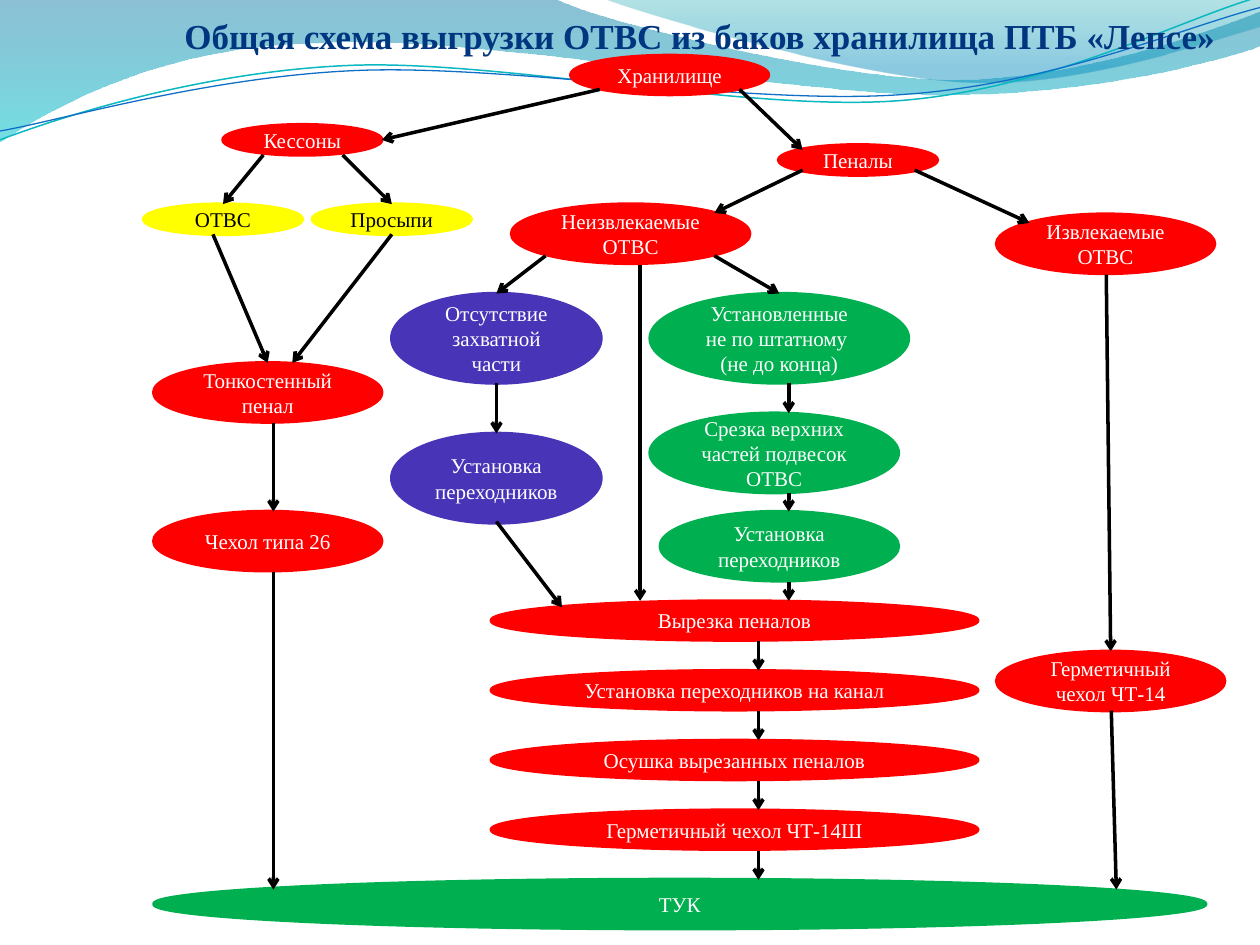
"""Build the slide with the unloading scheme as a flow of ellipses and arrows."""
from lxml.etree import SubElement
from pptx import Presentation
from pptx.dml.color import RGBColor
from pptx.enum.shapes import MSO_CONNECTOR, MSO_SHAPE
from pptx.enum.text import MSO_ANCHOR, PP_ALIGN
from pptx.oxml.ns import qn
from pptx.util import Inches, Pt

HUES = {
    "red": "FF0000", "green": "00B050", "violet": "4834B7", "yellow": "FFFF00",
    "white": "FFFFFF", "black": "000000", "navy": "00357F",
    "ocean": "0074A1", "aqua": "00C6CF", "teal": "00A1A9", "sky": "008BBF",
    "cyan": "0AB8BF", "blue": "0F6FC6",
}
RGB = {name: RGBColor.from_string(code) for name, code in HUES.items()}


def write(frame, text, size=12, hue="white", bold=False):
    """Fill a text frame with centred paragraphs, one for each line."""
    frame.word_wrap = True
    frame.vertical_anchor = MSO_ANCHOR.MIDDLE
    for i, line in enumerate(text.split("\n")):
        para = frame.paragraphs[0] if i == 0 else frame.add_paragraph()
        para.alignment = PP_ALIGN.CENTER
        run = para.add_run()
        run.text = line
        run.font.name = "Times New Roman"
        run.font.size = Pt(size)
        run.font.bold = bold
        run.font.color.rgb = RGB[hue]


def trace(shapes, path, closed):
    """Draw an outline of corners (2 numbers) and Bezier curves (6 numbers)."""
    dots = [(Inches(step[-2]), Inches(step[-1])) for step in path]
    pen = shapes.build_freeform(*dots[0])
    pen.add_line_segments(dots[1:], close=closed)
    shape = pen.convert_to_shape()
    shape.shadow.inherit = False
    legs = shape._element.spPr.findall(".//" + qn("a:lnTo"))
    for leg, step in zip(legs, path[1:]):
        if len(step) == 6:
            bend = SubElement(leg.getparent(), qn("a:cubicBezTo"))
            for x, y in zip(step[::2], step[1::2]):
                SubElement(bend, qn("a:pt"), x=str(Inches(x) - shape.left),
                           y=str(Inches(y) - shape.top))
            leg.getparent().replace(leg, bend)
    return shape


deck = Presentation()
deck.slide_width, deck.slide_height = Inches(10), Inches(7.5)
slide = deck.slides.add_slide(deck.slide_layouts[5])
shapes = slide.shapes

waves = [
    ([(0, 0), (4.4, -0.01), (4.76, 0.17, 6.64, 0.63, 7.58, 0.63),
      (8.53, 0.63, 9.58, 0.26, 10, 0.09), (10.01, 0.36),
      (9.83, 0.44, 8.7, 0.76, 7.46, 0.75), (6.22, 0.75, 3.82, 0.28, 2.57, 0.34),
      (1.29, 0.36, 0.46, 0.83, -0.01, 1.13)],
     [(0, "ocean", 45), (1, "aqua", 55)]),
    ([(4.79, -0.01), (5.09, 0.11, 6.82, 0.62, 7.69, 0.65),
      (8.56, 0.69, 9.61, 0.32, 10, 0.21), (10, 0)],
     [(0, "teal", 30), (0.8, "sky", 45)]),
]
for path, stops in waves:
    wave = trace(shapes, path, True)
    wave.line.fill.background()
    wave.fill.gradient()
    wave.fill.gradient_angle = 270
    marks = wave._element.spPr.findall(".//" + qn("a:gs"))
    for stop, mark, (spot, hue, alpha) in zip(wave.fill.gradient_stops, marks, stops):
        stop.position = spot
        stop.color.rgb = RGB[hue]
        SubElement(mark[0], qn("a:alpha"), val=str(alpha * 1000))

curves = [
    ([(0, 1.11), (0.48, 0.93, 1.58, 0.57, 2.77, 0.52), (3.95, 0.47, 5.93, 0.89, 7.13, 0.8),
      (8.33, 0.71, 9.38, 0.15, 9.98, -0.02)], "cyan", 0.85),
    ([(0, 1.04), (0.47, 0.96, 1.64, 0.61, 2.83, 0.56), (4.03, 0.51, 5.97, 0.84, 7.17, 0.75),
      (8.36, 0.67, 9.41, 0.21, 10, 0.06)], "blue", 0.75),
]
for path, hue, width in curves:
    curve = trace(shapes, path, False)
    curve.fill.background()
    curve.line.color.rgb = RGB[hue]
    curve.line.width = Pt(width)

title = shapes.title
title.left, title.top, title.width, title.height = map(Inches, (1.22, 0.05, 8.67, 0.47))
write(title.text_frame, "Общая схема выгрузки ОТВС из баков хранилища ПТБ «Лепсе»",
      size=20, hue="navy", bold=True)
title.element.getparent().append(title.element)

nodes = [
    ("store", "Хранилище", "red", 4.53, 0.44, 1.57, 0.31),
    ("cases", "Пеналы", "red", 6.18, 1.15, 1.26, 0.24),
    ("stuck", "Неизвлекаемые ОТВС", "red", 4.06, 1.62, 1.89, 0.47),
    ("free", "Извлекаемые ОТВС", "red", 7.91, 1.7, 1.73, 0.47),
    ("sealed", "Герметичный чехол ЧТ-14", "red", 7.91, 5.17, 1.81, 0.47),
    ("cask", "ТУК", "green", 1.22, 6.98, 8.35, 0.39),
    ("raised", "Установленные не по штатному \n(не до конца)", "green", 5.16, 2.33, 2.05, 0.71),
    ("cut", "Срезка верхних частей подвесок ОТВС", "green", 5.16, 3.28, 1.97, 0.63),
    ("fit", "Установка переходников", "green", 5.24, 4.06, 1.89, 0.55),
    ("no grip", "Отсутствие захватной части", "violet", 3.11, 2.33, 1.66, 0.71),
    ("adapt", "Установка переходников", "violet", 3.11, 3.44, 1.66, 0.71),
    ("caisson", "Кессоны", "red", 1.77, 0.99, 1.26, 0.24),
    ("fuel", "ОТВС", "yellow", 1.14, 1.62, 1.26, 0.24),
    ("spill", "Просыпи", "yellow", 2.48, 1.62, 1.26, 0.24),
    ("thin", "Тонкостенный пенал", "red", 1.22, 2.88, 1.81, 0.47),
    ("sleeve", "Чехол типа 26", "red", 1.22, 4.06, 1.81, 0.47),
]
links = [
    (5.87, 0.71, 6.37, 1.19, None),
    (6.37, 1.35, 5.67, 1.69, None),
    (7.26, 1.35, 8.17, 1.77, None),
    (8.78, 2.18, 8.82, 5.17, "sealed"),
    (8.82, 5.64, 8.86, 7.06, None),
    (5.67, 2.03, 6.18, 2.33, "raised"),
    (6.26, 3.04, 6.26, 3.28, None),
    (6.26, 3.91, 6.26, 4.06, None),
    (6.26, 4.62, 6.26, 4.77, None),
    (5.08, 2.1, 5.08, 4.77, None),
    (4.33, 2.03, 3.94, 2.33, "no grip"),
    (3.94, 3.04, 3.94, 3.44, "adapt"),
    (3.94, 4.14, 4.46, 4.82, None),
    (4.76, 0.71, 3.03, 1.11, None),
    (2.09, 1.23, 1.77, 1.62, "fuel"),
    (2.72, 1.23, 3.11, 1.62, "spill"),
    (1.69, 1.86, 2.13, 2.88, "thin"),
    (3.11, 1.86, 2.32, 2.88, None),
    (2.17, 3.36, 2.17, 4.06, None),
    (2.17, 4.54, 2.17, 7.06, None),
]
steps = ["Вырезка пеналов", "Установка переходников на канал",
         "Осушка вырезанных пеналов", "Герметичный чехол ЧТ-14Ш"]
pitch = (6.43 - 4.77) / 3
for i, step in enumerate(steps):
    top = 4.77 + i * pitch
    nodes.append((step, step, "red", 3.9, top, 3.86, 0.31))
    links.append((6.02, top + 0.32, 6.02, top + pitch, None))

ovals = {}
for key, text, hue, *box in nodes:
    oval = shapes.add_shape(MSO_SHAPE.OVAL, *map(Inches, box))
    oval.shadow.inherit = False
    oval.fill.solid()
    oval.fill.fore_color.rgb = oval.line.color.rgb = RGB[hue]
    oval.line.width = Pt(2)
    write(oval.text_frame, text, hue="black" if hue == "yellow" else "white")
    ovals[key] = oval

for *ends, goal in links:
    arrow = shapes.add_connector(MSO_CONNECTOR.STRAIGHT, *map(Inches, ends))
    if goal:
        arrow.end_connect(ovals[goal], 0)
    arrow.line.color.rgb = RGB["black"]
    arrow.line.width = Pt(2)
    SubElement(arrow.line._get_or_add_ln(), qn("a:tailEnd"), type="arrow")
    SubElement(arrow._element.spPr, qn("a:effectLst"))

deck.save("out.pptx")
